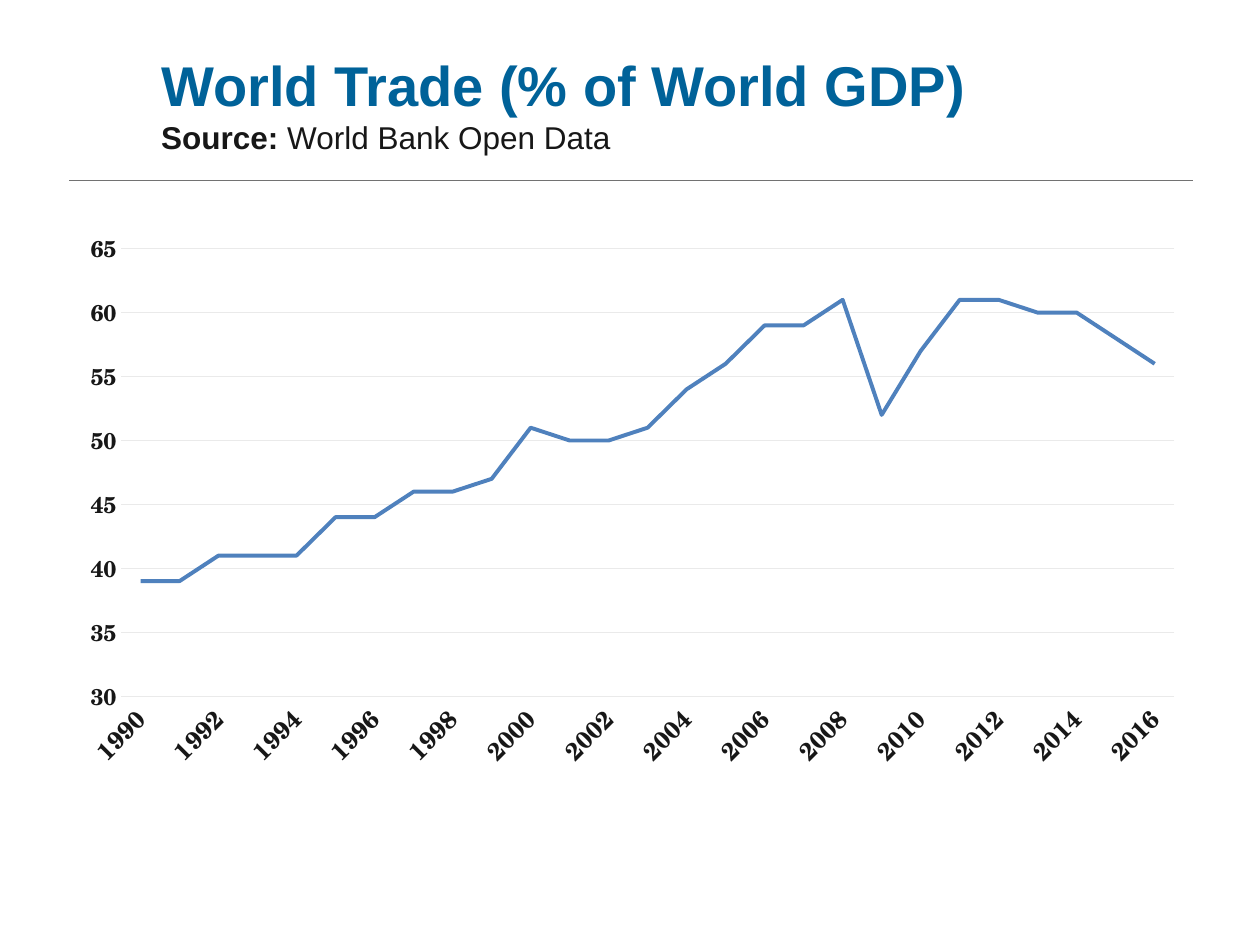
import pptx
import pptx.chart.data
import pptx.dml.color
import pptx.enum.chart
import pptx.enum.shapes
import pptx.enum.text
import pptx.oxml.xmlchemy
import pptx.util

Cm = pptx.util.Cm
Pt = pptx.util.Pt
RGBColor = pptx.dml.color.RGBColor
new_element = pptx.oxml.xmlchemy.OxmlElement

TITLE_BLUE = RGBColor(0x00, 0x62, 0x99)
INK = RGBColor(0x17, 0x17, 0x17)
RULE_GREY = RGBColor(0x72, 0x72, 0x72)
GRID_GREY = RGBColor(0xEA, 0xEA, 0xEA)
SERIES_BLUE = RGBColor(0x4F, 0x81, 0xBD)
CHART_FONT = "TeX Gyre Schola"


def set_font(font, color, **values):
    for name, value in values.items():
        setattr(font, name, value)
    font.color.rgb = color


deck = pptx.Presentation()
deck.slide_width = Cm(25.4)
deck.slide_height = Cm(19.05)
slide = deck.slides.add_slide(deck.slide_layouts[6])

# Rule under the heading
rule = slide.shapes.add_connector(
    pptx.enum.shapes.MSO_CONNECTOR.STRAIGHT, Cm(1.4), Cm(3.63), Cm(24.05), Cm(3.63))
rule.line.color.rgb = RULE_GREY
rule.line.width = Pt(0.5)
rule._element.spPr.append(new_element("a:effectLst"))

# Heading and source
box = slide.shapes.add_textbox(Cm(3), Cm(0.66), Cm(20.6), Cm(2.84))
box.text_frame.word_wrap = True
box.text_frame.vertical_anchor = pptx.enum.text.MSO_ANCHOR.MIDDLE
para = box.text_frame.paragraphs[0]
heading_spans = [
    ("World Trade (% of World GDP)", 32, TITLE_BLUE, True),
    ("Source: ", 18, INK, True),
    ("World Bank Open Data", 18, INK, False),
]
for index, (text, size, color, bold) in enumerate(heading_spans):
    span = para.add_run()
    span.text = text
    set_font(span.font, color, name="Arial", size=Pt(size), bold=bold)
    if index == 0:
        para.add_line_break()

# Trade share by year
trade_share = [39, 39, 41, 41, 41, 44, 44, 46, 46, 47, 51, 50, 50, 51,
               54, 56, 59, 59, 61, 52, 57, 61, 61, 60, 60, 58, 56]
chart_data = pptx.chart.data.CategoryChartData(number_format="0")
chart_data.categories = [str(year) for year in range(1990, 2017)]
chart_data.add_series("Series 1", trade_share)
chart = slide.shapes.add_chart(
    pptx.enum.chart.XL_CHART_TYPE.LINE,
    Cm(1.3), Cm(4.45), Cm(22.83), Cm(11.28), chart_data).chart
chart.has_legend = False
chart.has_title = False
set_font(chart.font, RULE_GREY, name=CHART_FONT, size=Pt(10))

plot = chart.plots[0]
plot.vary_by_categories = False
series = plot.series[0]
series.smooth = False
series.marker.style = pptx.enum.chart.XL_MARKER_STYLE.NONE
series.format.line.color.rgb = SERIES_BLUE
series.format.line.width = Pt(2.25)

# Axes
year_axis, share_axis = chart.category_axis, chart.value_axis
for axis, size in ((year_axis, 14), (share_axis, 13)):
    axis.major_tick_mark = pptx.enum.chart.XL_TICK_MARK.NONE
    axis.minor_tick_mark = pptx.enum.chart.XL_TICK_MARK.NONE
    set_font(axis.tick_labels.font, INK, name=CHART_FONT, size=Pt(size), bold=True)
scale = {"minimum_scale": 30, "maximum_scale": 65, "major_unit": 5,
         "has_major_gridlines": True}
for name, value in scale.items():
    setattr(share_axis, name, value)
share_axis.tick_labels.number_format = "0"
share_axis.tick_labels.number_format_is_linked = False
share_axis.format.line.fill.background()
for line in (year_axis.format.line, share_axis.major_gridlines.format.line):
    line.color.rgb = GRID_GREY
    line.width = Pt(0.75)

# Slanted label for every second year
chart_xml = chart._chartSpace
chart_xml.xpath(".//c:catAx/c:txPr/a:bodyPr")[0].set("rot", "-2700000")
label_skip = new_element("c:tickLblSkip")
label_skip.set("val", "2")
chart_xml.xpath(".//c:catAx/c:noMultiLvlLbl")[0].addprevious(label_skip)

# Fixed plot area, as fractions of the chart
plot_area = chart_xml.xpath(".//c:plotArea")[0]
for layout in plot_area.xpath("./c:layout"):
    plot_area.remove(layout)
layout = new_element("c:layout")
manual = new_element("c:manualLayout")
layout.append(manual)
placement = {"layoutTarget": "inner", "xMode": "edge", "yMode": "edge",
             "x": 0.05, "y": 0.05, "w": 0.93, "h": 0.8}
for name, value in placement.items():
    item = new_element(f"c:{name}")
    item.set("val", str(value))
    manual.append(item)
plot_area.insert(0, layout)

deck.save("out.pptx")
